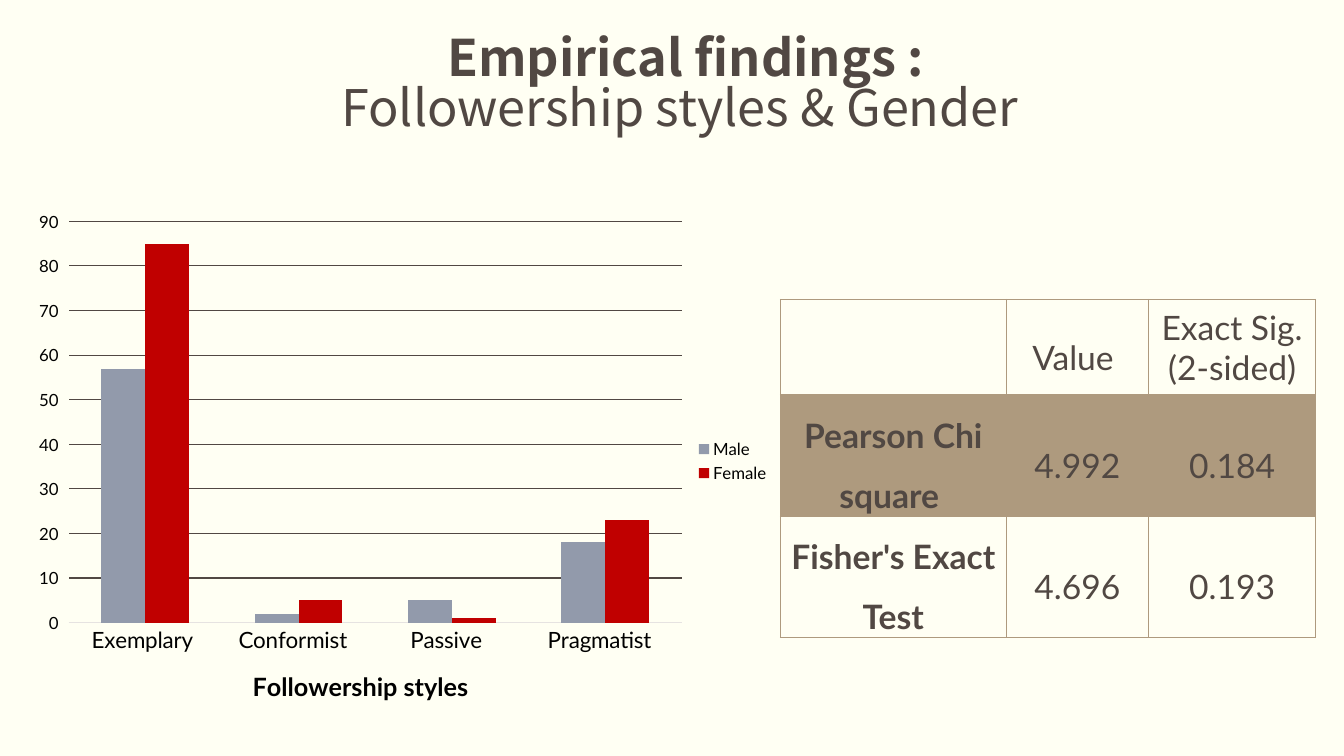
from dataclasses import dataclass
from lxml import etree
from pptx import Presentation
from pptx import util as u
from pptx.chart.data import CategoryChartData
from pptx.dml.color import RGBColor
from pptx.enum import chart as ch, text as tx
from pptx.oxml.ns import qn


@dataclass(frozen=True)
class Theme:
    back: str = "FFFFF3"
    ink: str = "514843"
    black: str = "000000"
    male: str = "929AAB"
    female: str = "C00000"
    axis: str = "E6E3E1"
    edge: str = "AE9A7E"
    head: str = "Noto Sans CJK KR"
    body: str = "Lato"
    title: int = 36
    cell: int = 24
    label: int = 18
    cats: int = 16
    small: int = 12


class Deck:
    def __init__(self, theme):
        self.theme = theme
        self.file = Presentation()
        self.file.slide_width = u.Inches(13.33)
        self.file.slide_height = u.Inches(7.5)
        self.slide = self.file.slides.add_slide(self.file.slide_layouts[5])
        self.paint(self.slide.background.fill, theme.back)

    def apply(self, item, **form):
        for key, value in form.items():
            setattr(item, key, value)

    def paint(self, fill, color):
        fill.solid()
        fill.fore_color.rgb = RGBColor.from_string(color)

    def font(self, font, size, color, face=None, bold=False):
        self.apply(font, size=u.Pt(size), name=face or self.theme.body, bold=bold)
        font.color.rgb = RGBColor.from_string(color)

    def line(self, line, color):
        line.color.rgb = RGBColor.from_string(color)
        line.width = u.Pt(0.75)

    def box(self, *box):
        return [u.Inches(part) for part in box]

    def title(self, lines, box):
        t = self.theme
        shape = self.slide.shapes.title
        self.apply(shape, **dict(zip(("left", "top", "width", "height"), self.box(*box))))
        frame = shape.text_frame
        self.apply(frame, word_wrap=True, auto_size=tx.MSO_AUTO_SIZE.NONE,
                   vertical_anchor=tx.MSO_ANCHOR.MIDDLE)
        frame.text = "\n".join(lines)
        for row, para in enumerate(frame.paragraphs):
            self.apply(para, alignment=tx.PP_ALIGN.CENTER, line_spacing=0.83)
            self.font(para.runs[0].font, t.title, t.ink, t.head, row == 0)

    def chart(self, cats, series, label, box):
        t = self.theme
        data = CategoryChartData()
        data.categories = cats
        for name, _, values in series:
            data.add_series(name, values)
        chart = self.slide.shapes.add_chart(
            ch.XL_CHART_TYPE.COLUMN_CLUSTERED, *self.box(*box), data).chart
        self.apply(chart, has_title=False, has_legend=True)
        self.font(chart.font, t.small, t.black)
        self.apply(chart.legend, position=ch.XL_LEGEND_POSITION.RIGHT, include_in_layout=False)
        self.font(chart.legend.font, t.small, t.black)
        plot = chart.plots[0]
        self.apply(plot, gap_width=150, overlap=0, vary_by_categories=False)
        for bar, (_, color, _) in zip(plot.series, series):
            self.paint(bar.format.fill, color)
        cat, val = chart.category_axis, chart.value_axis
        self.apply(cat, major_tick_mark=ch.XL_TICK_MARK.NONE)
        self.font(cat.tick_labels.font, t.cats, t.black)
        self.line(cat.format.line, t.axis)
        cat.axis_title.text_frame.text = label
        self.font(cat.axis_title.text_frame.paragraphs[0].runs[0].font,
                  t.label, t.black, bold=True)
        self.apply(val, minimum_scale=0, maximum_scale=90, major_unit=10,
                   major_tick_mark=ch.XL_TICK_MARK.OUTSIDE)
        self.font(val.tick_labels.font, t.small, t.black)
        val.format.line.fill.background()
        self.line(val.major_gridlines.format.line, t.ink)
        self.place(chart, x=0.06, y=0.04, w=0.81, h=0.77)

    def place(self, chart, **spots):
        area = chart._chartSpace.chart.plotArea
        for old in area.findall(qn("c:layout")):
            area.remove(old)
        layout = etree.Element(qn("c:layout"))
        manual = etree.SubElement(layout, qn("c:manualLayout"))
        marks = dict(layoutTarget="inner", xMode="edge", yMode="edge", **spots)
        for key, value in marks.items():
            etree.SubElement(manual, qn("c:" + key)).set("val", str(value))
        area.insert(0, layout)

    def border(self, cell, side, width):
        props = cell._tc.get_or_add_tcPr()
        line = etree.SubElement(props, qn("a:ln" + side), w=str(u.Pt(width)))
        fill = etree.SubElement(line, qn("a:solidFill"))
        etree.SubElement(fill, qn("a:srgbClr"), val=self.theme.edge)

    def shade(self, cell):
        self.paint(cell.fill, self.theme.edge)
        color = cell._tc.tcPr.find(".//" + qn("a:solidFill") + "/" + qn("a:srgbClr"))
        etree.SubElement(color, qn("a:alpha"), val="20000")

    def table(self, rows, wide, tall, spot):
        t = self.theme
        grid = self.slide.shapes.add_table(
            len(rows), len(wide), *self.box(*spot, sum(wide), sum(tall))).table
        self.apply(grid, first_row=False, horz_banding=False)
        for col, width in zip(grid.columns, wide):
            col.width = u.Inches(width)
        for row, height in zip(grid.rows, tall):
            row.height = u.Inches(height)
        for r, row in enumerate(rows):
            for c, words in enumerate(row):
                cell = grid.cell(r, c)
                side = r > 0 and c == 0
                anchor = tx.MSO_ANCHOR.TOP if side else tx.MSO_ANCHOR.MIDDLE
                pad = u.Inches(0.07)
                self.apply(cell, margin_left=pad, margin_right=pad, margin_top=0,
                           margin_bottom=0, vertical_anchor=anchor)
                for edge in "LRTB":
                    thick = (r, edge) in ((0, "B"), (1, "T"))
                    self.border(cell, edge, 2 if thick else 1)
                if r == 1:
                    self.shade(cell)
                else:
                    cell.fill.background()
                if words:
                    cell.text = words
                    para = cell.text_frame.paragraphs[0]
                    space = 1 if (r, c) == (0, 2) else 1.5
                    self.apply(para, alignment=tx.PP_ALIGN.CENTER, line_spacing=space)
                    self.font(para.runs[0].font, t.cell, t.ink, bold=side)


def main():
    theme = Theme()
    deck = Deck(theme)
    deck.title(["Empirical findings :", "Followership styles & Gender "],
               (0.36, 0.2, 12.88, 1.31))
    deck.chart(["Exemplary ", "Conformist  ", "Passive  ", "Pragmatist  "],
               [("Male ", theme.male, (57, 2, 5, 18)),
                ("Female", theme.female, (85, 5, 1, 23))],
               "Followership styles", (0.23, 1.99, 7.51, 5.17))
    deck.table([["", "Value ", "Exact Sig. (2-sided)"],
                ["Pearson Chi square ", "4.992", "0.184"],
                ["Fisher's Exact Test", "4.696", "0.193"]],
               (2.24, 1.41, 1.66), (0.95, 1.2, 1.2), (7.74, 2.97))
    deck.file.save("out.pptx")


if __name__ == "__main__":
    main()
